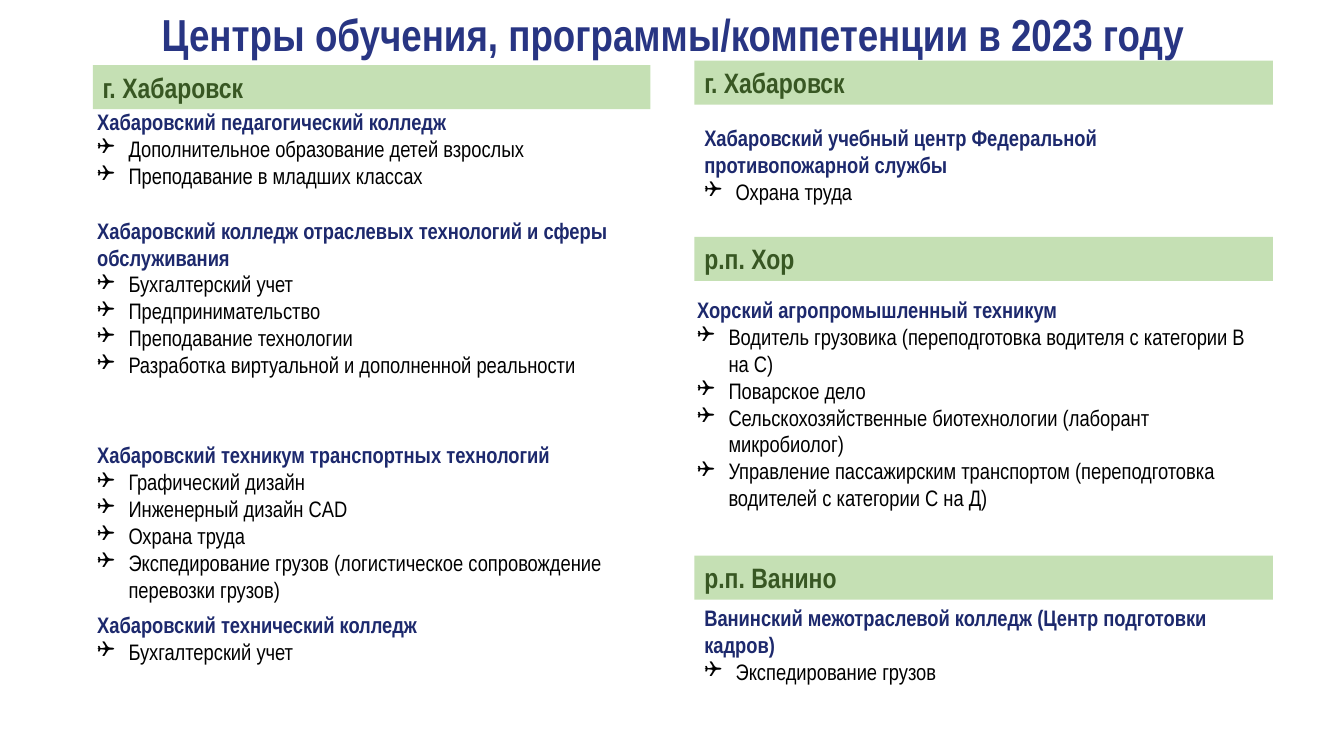
from lxml import etree
from pptx import Presentation
from pptx import util as u
from pptx.dml.color import RGBColor
from pptx.enum import shapes, text
from pptx.oxml.ns import qn

TITLE_BLUE = RGBColor(0x28, 0x35, 0x83)
COLLEGE_BLUE = RGBColor(0x1D, 0x29, 0x6D)
BAND_GREEN = RGBColor(0xC5, 0xE0, 0xB4)
TOWN_GREEN = RGBColor(0x38, 0x57, 0x23)
BLACK = RGBColor(0, 0, 0)

LEFT, RIGHT = 2.2, 17.5  # column edges, cm
COLLEGE_W = 14.58
INDENT = u.Cm(0.79)

# Town bands: left, top, width, name
TOWNS = [
    (2.34, 1.64, 14.05, "г. Хабаровск"),
    (RIGHT, 1.53, 14.58, "г. Хабаровск"),
    (RIGHT, 5.97, 14.58, "р.п. Хор"),
    (RIGHT, 14.0, 14.58, "р.п. Ванино"),
]

# Colleges: left, top, height, name, programmes
COLLEGES = [
    (LEFT, 2.6, 2.31, "Хабаровский педагогический колледж",
     ["Дополнительное образование детей взрослых",
      "Преподавание в младших классах"]),
    (LEFT, 5.34, 4.37,
     "Хабаровский колледж отраслевых технологий и сферы обслуживания",
     ["Бухгалтерский учет", "Предпринимательство",
      "Преподавание технологии",
      "Разработка виртуальной и дополненной реальности"]),
    (LEFT, 11.0, 4.37, "Хабаровский техникум транспортных технологий",
     ["Графический дизайн", "Инженерный дизайн CAD", "Охрана труда",
      "Экспедирование грузов (логистическое сопровождение перевозки грузов)"]),
    (LEFT, 15.27, 1.63, "Хабаровский технический колледж",
     ["Бухгалтерский учет"]),
    (RIGHT, 3.0, 2.31,
     "Хабаровский учебный центр Федеральной противопожарной службы",
     ["Охрана труда"]),
    (17.32, 7.34, 5.74, "Хорский агропромышленный техникум",
     ["Водитель грузовика (переподготовка водителя с категории В на С)",
      "Поварское дело",
      "Сельскохозяйственные биотехнологии (лаборант микробиолог)",
      "Управление пассажирским транспортом "
      "(переподготовка водителей с категории С на Д)"]),
    (RIGHT, 15.11, 2.31,
     "Ванинский межотраслевой колледж (Центр подготовки кадров)",
     ["Экспедирование грузов"]),
]


class TrainingSlide:
    """Holds the slide and its text style."""

    font = "Arial Narrow"

    def __init__(self, slide):
        self.s = slide

    def run(self, p, words, size, color, bold=True):
        r = p.add_run()
        r.text = words
        r.font.name = self.font
        r.font.size = u.Pt(size)
        r.font.bold = bold
        r.font.color.rgb = color

    def box(self, left, top, width, height):
        sp = self.s.shapes.add_textbox(*map(u.Cm, (left, top, width, height)))
        sp.text_frame.word_wrap = True
        return sp.text_frame

    def title(self, words):
        tf = self.box(1, 0.3, 31.95, 1.27)
        tf.vertical_anchor = text.MSO_ANCHOR.MIDDLE
        p = tf.paragraphs[0]
        p.alignment = text.PP_ALIGN.CENTER
        p.line_spacing = 0.9
        self.run(p, words, 32, TITLE_BLUE)

    def town(self, left, top, width, name):
        sp = self.s.shapes.add_shape(
            shapes.MSO_SHAPE.RECTANGLE,
            *map(u.Cm, (left, top, width, 1.11)))
        sp.shadow.inherit = False
        sp.fill.solid()
        sp.fill.fore_color.rgb = BAND_GREEN
        sp.line.fill.background()
        tf = sp.text_frame
        tf.word_wrap = True
        tf.vertical_anchor = text.MSO_ANCHOR.TOP
        p = tf.paragraphs[0]
        p.alignment = text.PP_ALIGN.LEFT
        self.run(p, name, 20, TOWN_GREEN)

    def college(self, left, top, height, name, programmes):
        tf = self.box(left, top, COLLEGE_W, height)
        self.run(tf.paragraphs[0], name, 16, COLLEGE_BLUE)
        for programme in programmes:
            p = tf.add_paragraph()
            self.bullet(p)
            self.run(p, programme, 16, BLACK, bold=False)

    def bullet(self, p):
        pPr = p._p.get_or_add_pPr()
        pPr.set("marL", str(INDENT))
        pPr.set("indent", str(-INDENT))
        etree.SubElement(pPr, qn("a:buFont")).set("typeface", "Wingdings")
        etree.SubElement(pPr, qn("a:buChar")).set("char", "❑")


def main():
    prs = Presentation()
    prs.slide_width, prs.slide_height = u.Cm(33.87), u.Cm(19.05)
    page = TrainingSlide(prs.slides.add_slide(prs.slide_layouts[6]))

    # Town bands and the colleges under them
    for town in TOWNS:
        page.town(*town)
    for college in COLLEGES:
        page.college(*college)

    # Heading
    page.title("Центры обучения, программы/компетенции в 2023 году")
    prs.save("out.pptx")


if __name__ == "__main__":
    main()
